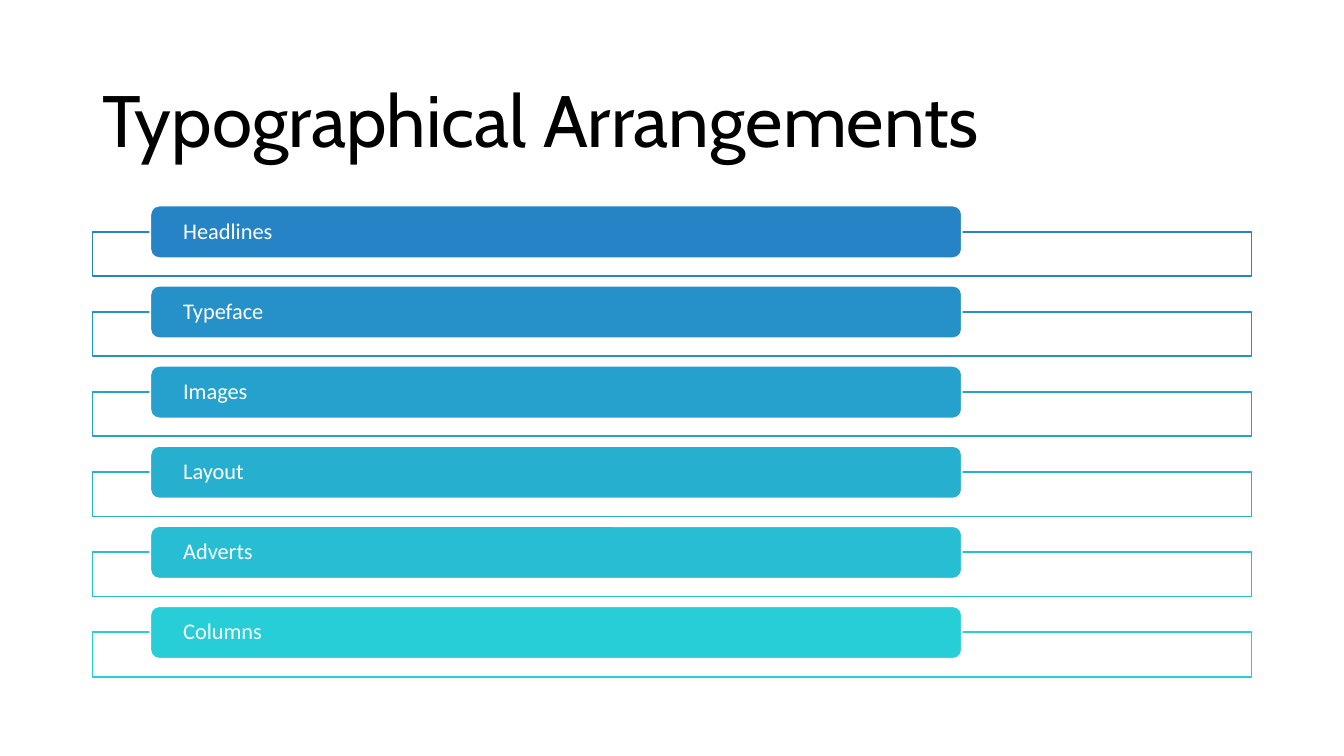
"""Build a slide listing typographical arrangements as six framed bars."""
import dataclasses
import typing

import lxml.etree
import pptx
import pptx.dml.color
import pptx.enum.shapes
import pptx.enum.text
import pptx.oxml.ns
import pptx.util

SHAPES = pptx.enum.shapes.MSO_SHAPE


@dataclasses.dataclass(frozen=True)
class Theme:
    white: str = "FFFFFF"
    black: str = "000000"
    title_font: str = "Cabin"
    body_font: str = "Calibri"
    title_size: float = 52
    body_size: float = 16
    line_width: float = 1.25
    frame_opacity: int = 90


@dataclasses.dataclass(frozen=True)
class Area:
    """Position and size as percentages of the slide."""
    left: float
    top: float
    width: float
    height: float

    def lower(self, distance: float) -> "Area":
        return dataclasses.replace(self, top=self.top + distance)

    def place(self) -> tuple[int, ...]:
        shares = ((self.left, WIDTH), (self.top, HEIGHT), (self.width, WIDTH), (self.height, HEIGHT))
        return tuple(round(share / 100 * side) for share, side in shares)


@dataclasses.dataclass(frozen=True)
class Topic:
    label: str
    color: str


THEME = Theme()
WIDTH, HEIGHT = pptx.util.Inches(13.333), pptx.util.Inches(7.5)
TITLE = Area(6.88, 8.13, 86.25, 16.53)
FRAME = Area(6.88, 30.65, 86.25, 5.88)
BAR = Area(11.19, 27.2, 60.38, 6.95)
ROW_PITCH = 10.6
TOPICS = (
    Topic("Headlines", "2683C6"),
    Topic("Typeface", "2691C9"),
    Topic("Images", "26A0CD"),
    Topic("Layout", "27AFD0"),
    Topic("Adverts", "27BED4"),
    Topic("Columns", "27CED7"),
)


def rgb(color: str) -> pptx.dml.color.RGBColor:
    return pptx.dml.color.RGBColor.from_string(color)


def apply(target: typing.Any, values: dict[str, typing.Any]) -> None:
    for name, value in values.items():
        setattr(target, name, value)


def write(box: typing.Any, text: str, font: str, size: float, color: str,
          inset: float, margin: float, after: float) -> None:
    side, edge = pptx.util.Inches(inset), pptx.util.Inches(margin)
    apply(box.text_frame, {
        "word_wrap": True,
        "vertical_anchor": pptx.enum.text.MSO_ANCHOR.MIDDLE,
        "margin_left": side, "margin_right": side,
        "margin_top": edge, "margin_bottom": edge,
    })
    para = box.text_frame.paragraphs[0]
    apply(para, {
        "alignment": pptx.enum.text.PP_ALIGN.LEFT,
        "line_spacing": 0.9,
        "space_after": pptx.util.Pt(after),
    })
    span = para.add_run()
    span.text = text
    apply(span.font, {"name": font, "size": pptx.util.Pt(size)})
    span.font.color.rgb = rgb(color)


def draw_shape(shapes: typing.Any, kind: SHAPES, area: Area, fill: str, line: str) -> typing.Any:
    box = shapes.add_shape(kind, *area.place())
    box.shadow.inherit = False
    box.fill.solid()
    box.fill.fore_color.rgb = rgb(fill)
    box.line.color.rgb = rgb(line)
    box.line.width = pptx.util.Pt(THEME.line_width)
    return box


def set_opacity(box: typing.Any, percent: int) -> None:
    qn = pptx.oxml.ns.qn
    color = box.element.spPr.find(qn("a:solidFill")).find(qn("a:srgbClr"))
    lxml.etree.SubElement(color, qn("a:alpha")).set("val", str(percent * 1000))


def draw_topic(shapes: typing.Any, topic: Topic, row: int) -> None:
    drop = row * ROW_PITCH
    frame = draw_shape(shapes, SHAPES.RECTANGLE, FRAME.lower(drop), THEME.white, topic.color)
    set_opacity(frame, THEME.frame_opacity)
    bar = draw_shape(shapes, SHAPES.ROUNDED_RECTANGLE, BAR.lower(drop), topic.color, THEME.white)
    write(bar, topic.label, THEME.body_font, THEME.body_size, THEME.white, 0.3, 0, 5.6)


def main() -> None:
    deck = pptx.Presentation()
    apply(deck, {"slide_width": WIDTH, "slide_height": HEIGHT})
    page = deck.slides.add_slide(deck.slide_layouts[6])
    title = page.shapes.add_textbox(*TITLE.place())
    write(title, "Typographical Arrangements", THEME.title_font, THEME.title_size,
          THEME.black, 0.1, 0.05, 6)
    topic_list = page.shapes.add_group_shape()
    for row, topic in enumerate(TOPICS):
        draw_topic(topic_list.shapes, topic, row)
    deck.save("out.pptx")


if __name__ == "__main__":
    main()
